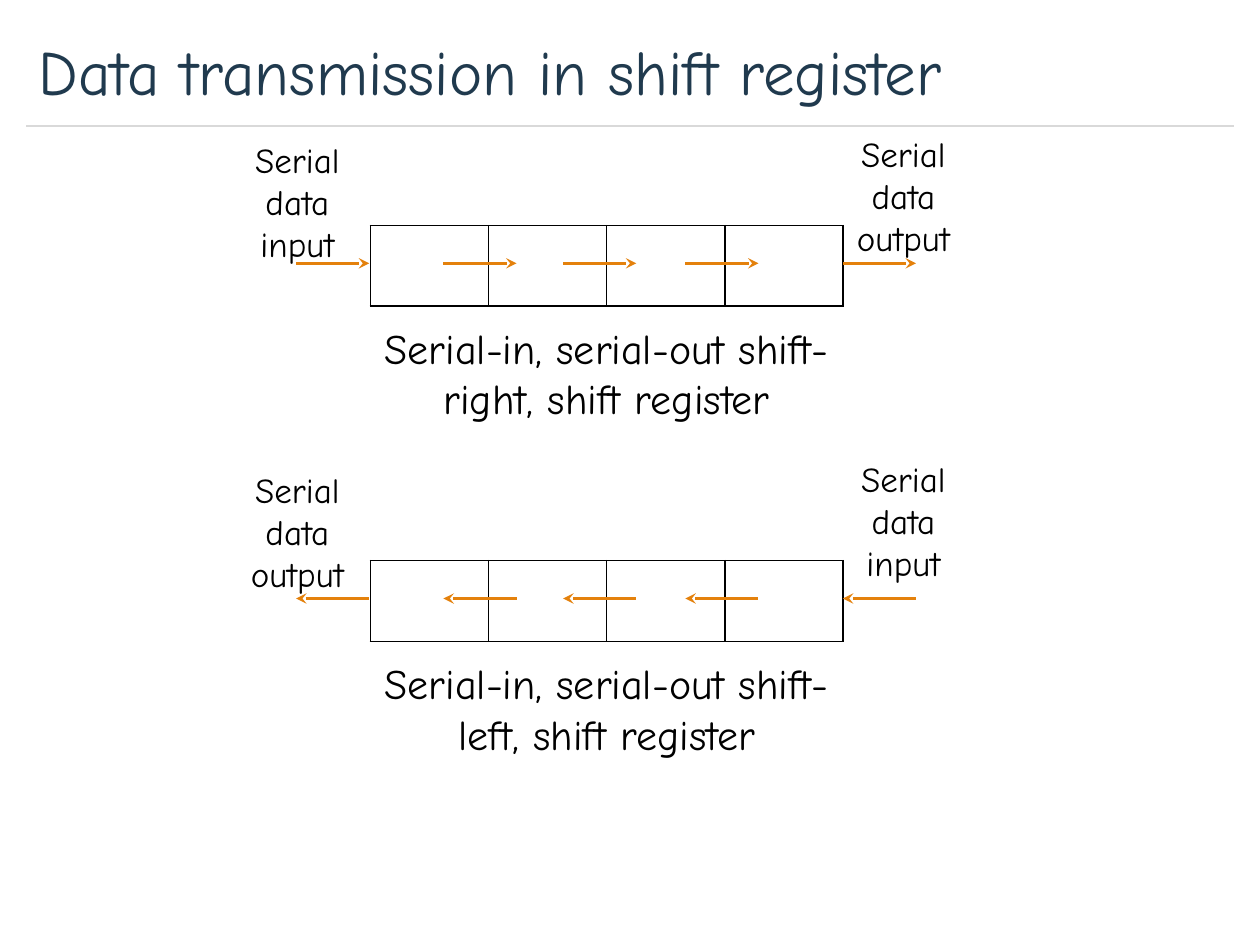
from dataclasses import dataclass

from lxml.etree import SubElement
from pptx import Presentation
from pptx.dml.color import RGBColor
from pptx.enum.shapes import MSO_CONNECTOR
from pptx.enum.text import MSO_ANCHOR, MSO_AUTO_SIZE, PP_ALIGN
from pptx.oxml import parse_xml
from pptx.oxml.ns import nsdecls, qn
from pptx.util import Inches, Pt


@dataclass(frozen=True)
class Theme:
    """Colours, font and type sizes of the slide."""
    font: str = "Comic Neue"
    title: str = "203A4E"
    text: str = "000000"
    rule: str = "D9D9D9"
    arrow: str = "E4810C"
    title_size: int = 36
    caption_size: int = 24
    label_size: int = 20


THEME = Theme()
CELLS = 4
ARROW_LENGTH = 0.58
ARROW_STARTS = (-0.59, 0.58, 1.53, 2.5, 3.75)


def add_text(s, box, text, size, color=THEME.text, align=PP_ALIGN.CENTER):
    """Add a wrapped text box and return its text frame."""
    tf = s.shapes.add_textbox(*map(Inches, box)).text_frame
    tf.word_wrap = True
    p = tf.paragraphs[0]
    p.text = text
    p.alignment = align
    p.font.name = THEME.font
    p.font.size = Pt(size)
    p.font.color.rgb = RGBColor.from_string(color)
    return tf


def add_line(s, x1, x2, y, color, width):
    """Add a horizontal line without a shadow and return it."""
    line = s.shapes.add_connector(
        MSO_CONNECTOR.STRAIGHT, Inches(x1), Inches(y), Inches(x2), Inches(y))
    line.line.color.rgb = RGBColor.from_string(color)
    line.line.width = Pt(width)
    SubElement(line._element.spPr, qn("a:effectLst"))
    return line


def add_arrow(s, x, y, end):
    """Add a shift arrow whose head sits at headEnd or tailEnd."""
    arrow = add_line(s, x, x + ARROW_LENGTH, y, THEME.arrow, 2)
    SubElement(arrow.line._get_or_add_ln(), qn(f"a:{end}"), type="stealth")


def add_cells(s, box):
    """Add the register as a one-row table of outlined cells."""
    table = s.shapes.add_table(1, CELLS, *map(Inches, box)).table
    table.first_row = table.horz_banding = False
    for column in table.columns:
        column.width = Inches(box[2] / CELLS)
    for cell in table.iter_cells():
        cell.fill.background()
        tcPr = cell._tc.get_or_add_tcPr()
        for i, side in enumerate("LRTB"):
            tcPr.insert(i, parse_xml(
                f'<a:ln{side} {nsdecls("a")} w="12700"><a:solidFill>'
                f'<a:srgbClr val="{THEME.text}"/></a:solidFill></a:ln{side}>'))


def add_header(s, box, title):
    """Add the slide title with a rule along the bottom of its box."""
    left, top, width, height = box
    add_line(s, left, left + width, top + height, THEME.rule, 0.75)
    tf = add_text(s, box, title, THEME.title_size, THEME.title, PP_ALIGN.LEFT)
    tf.vertical_anchor = MSO_ANCHOR.MIDDLE


def add_register(s, box, direction, end, labels):
    """Add a shift register with its arrows, caption and end labels."""
    left, top, width, height = box
    add_cells(s, box)
    for start in ARROW_STARTS:
        add_arrow(s, left + start, top + 0.3, end)
    caption = f"Serial-in, serial-out shift-{direction}, shift register"
    texts = [((left, top + 0.72, width, 0.91), caption, THEME.caption_size)]
    for center, (role, rise, label_width) in zip((-0.58, 4.23), labels):
        label_box = (left + center - label_width / 2, top - rise, label_width, 1.11)
        texts.append((label_box, f"Serial data {role}", THEME.label_size))
    for text_box, text, size in texts:
        tf = add_text(s, text_box, text, size)
        tf.auto_size = MSO_AUTO_SIZE.SHAPE_TO_FIT_TEXT


def main():
    """Build the slide and save it."""
    prs = Presentation()
    prs.slide_width, prs.slide_height = Inches(10), Inches(7.5)
    s = prs.slides.add_slide(prs.slide_layouts[6])
    add_header(s, (0.21, 0.12, 9.58, 0.88), "Data transmission in shift register")
    add_register(s, (2.94, 1.79, 3.75, 0.64), "right", "tailEnd",
                 (("input", 0.74, 0.88), ("output", 0.79, 1.06)))
    add_register(s, (2.94, 4.45, 3.75, 0.64), "left", "headEnd",
                 (("output", 0.78, 1.06), ("input", 0.87, 0.88)))
    prs.save("out.pptx")


if __name__ == "__main__":
    main()
